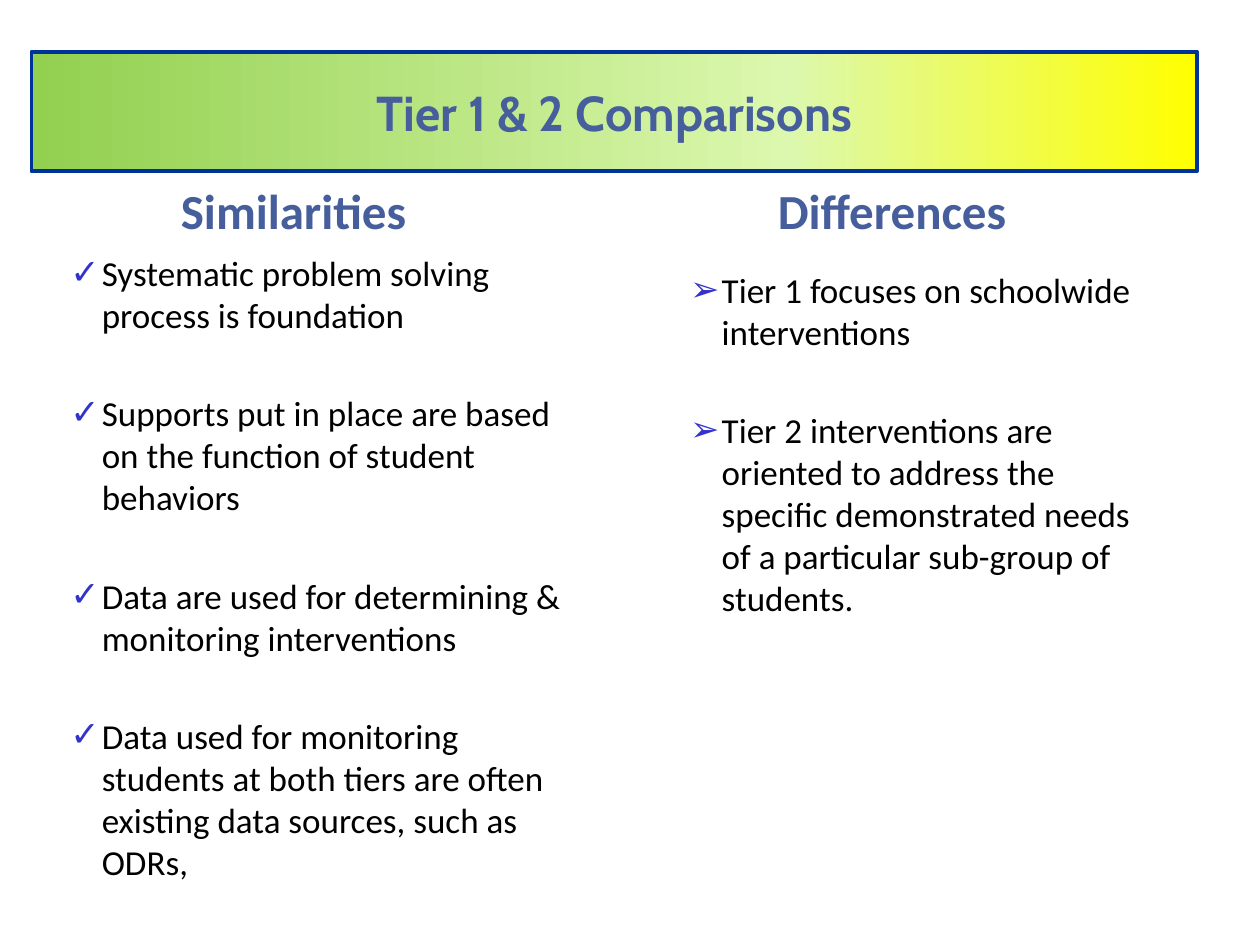
from copy import deepcopy

from lxml.etree import SubElement
from pptx import Presentation
from pptx.dml.color import RGBColor
from pptx.enum.shapes import MSO_SHAPE
from pptx.enum.text import MSO_ANCHOR, PP_ALIGN
from pptx.oxml.ns import qn
from pptx.util import Inches, Pt

TITLE_INK = "465E9C"
BULLET_INK = "3333CC"
TEXT_INK = "000000"

SAME = [
    "Systematic problem solving process is foundation",
    "Supports put in place are based on the function of student behaviors",
    "Data are used for determining & monitoring interventions",
    "Data used for monitoring students at both tiers are often existing "
    "data sources, such as ODRs,",
]
DIFFER = [
    "Tier 1 focuses on schoolwide interventions",
    "Tier 2 interventions are oriented to address the specific demonstrated "
    "needs of a particular sub-group of students.",
]


def color(code):
    return RGBColor.from_string(code)


def set_font(para, size, ink, name="Calibri", bold=False):
    font = para.font
    font.name, font.size, font.bold = name, Pt(size), bold
    font.color.rgb = color(ink)


def set_head(frame, text, anchor, name="Calibri"):
    frame.word_wrap = True
    frame.vertical_anchor = anchor
    para = frame.paragraphs[0]
    para.text = text
    para.alignment = PP_ALIGN.CENTER
    set_font(para, 28, TITLE_INK, name, bold=True)


def set_bullet(para, mark):
    props = para._p.get_or_add_pPr()
    props.set("marL", str(Inches(0.38)))
    props.set("indent", str(Inches(-0.25)))
    tint = SubElement(props, qn("a:buClr"))
    SubElement(tint, qn("a:srgbClr"), val=BULLET_INK)
    SubElement(props, qn("a:buFont"), typeface="Calibri")
    SubElement(props, qn("a:buChar"), char=mark)


def add_banner(slide, box, text):
    banner = slide.shapes.add_shape(MSO_SHAPE.RECTANGLE, *map(Inches, box))
    banner.shadow.inherit = False
    banner.line.color.rgb = color("003399")
    banner.line.width = Pt(2.25)

    # Three-stop gradient running left to right
    fill = banner.fill
    fill.gradient()
    fill.gradient_angle = 0
    first = banner._element.spPr.find(".//" + qn("a:gs"))
    first.addnext(deepcopy(first))
    shades = [(0, "92D050"), (0.65, "DCF8AE"), (1, "FFFF00")]
    for stop, (place, code) in zip(fill.gradient_stops, shades):
        stop.position = place
        stop.color.rgb = color(code)

    set_head(banner.text_frame, text, MSO_ANCHOR.MIDDLE, "Cabin")


def add_head(slide, box, text):
    frame = slide.shapes.add_textbox(*map(Inches, box)).text_frame
    set_head(frame, text, MSO_ANCHOR.BOTTOM)


def add_list(slide, box, items, mark, back=None):
    panel = slide.shapes.add_textbox(*map(Inches, box))
    if back:
        panel.fill.solid()
        panel.fill.fore_color.rgb = color(back)
    frame = panel.text_frame
    frame.word_wrap = True
    for i, item in enumerate(items):
        para = frame.add_paragraph() if i else frame.paragraphs[0]
        para.text = item
        para.space_before = Pt(32 if i else 0)
        set_bullet(para, mark)
        set_font(para, 20, TEXT_INK)


def main():
    deck = Presentation()
    deck.slide_width, deck.slide_height = Inches(10), Inches(7.5)
    slide = deck.slides.add_slide(deck.slide_layouts[6])

    # Right column
    add_head(slide, (5.08, 1.25, 4, 0.7), "Differences")
    add_list(slide, (5.25, 2.08, 3.96, 5.06), DIFFER, "➢", "FFFFFF")

    # Left column
    add_head(slide, (0.33, 1.25, 4, 0.7), "Similarities")
    add_list(slide, (0.33, 1.95, 4.33, 4.32), SAME, "✓")

    # Title band
    add_banner(slide, (0.25, 0.41, 9.25, 0.95), "Tier 1 & 2 Comparisons")

    deck.save("out.pptx")


if __name__ == "__main__":
    main()
